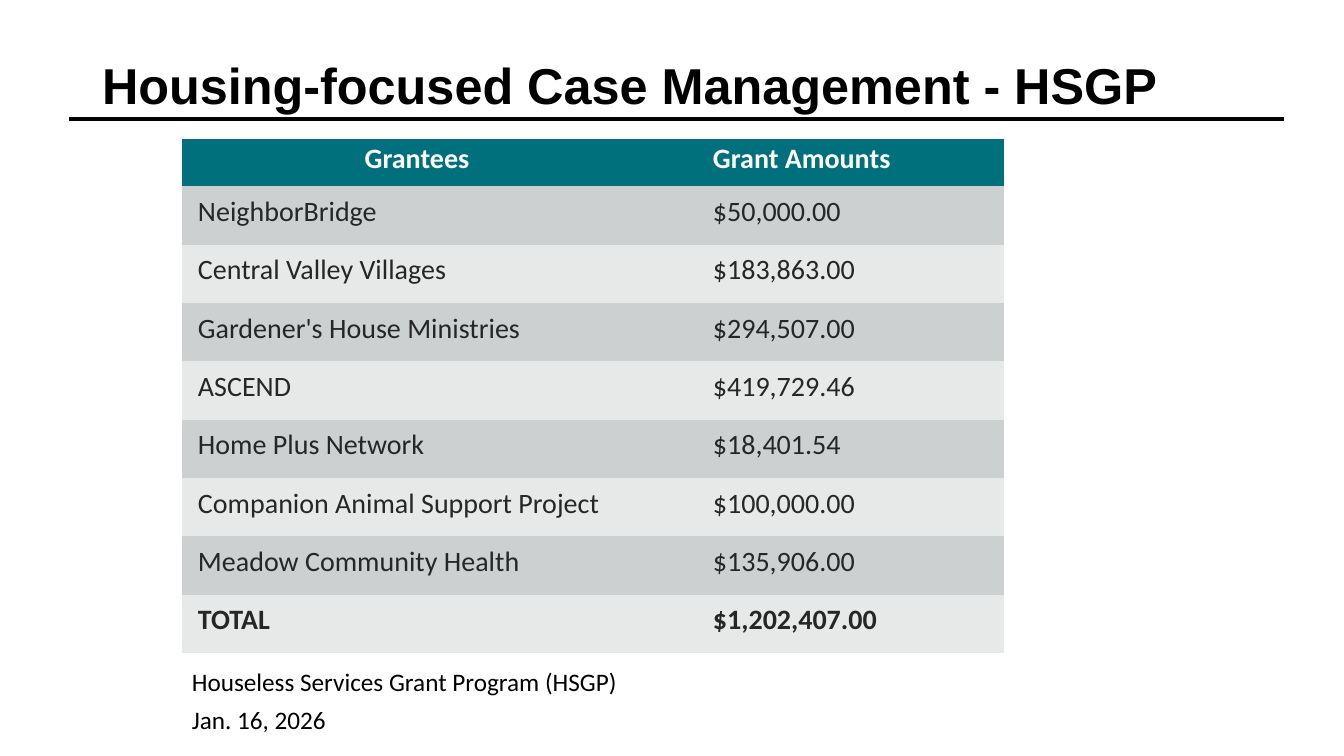
from lxml.etree import SubElement
from pptx import Presentation
from pptx.dml.color import RGBColor
from pptx.enum.shapes import MSO_CONNECTOR
from pptx.enum.text import MSO_ANCHOR, MSO_AUTO_SIZE, PP_ALIGN
from pptx.oxml.ns import qn
from pptx.util import Emu, Pt

EMU_PER_PX = 914400 / 100.8
COLORS = {
    "black": "000000", "white": "FFFFFF", "teal": "00717C",
    "ink": "262626", "dark_band": "CCD0D1", "light_band": "E7E9E9",
}
NO_STYLE = "{2D5ABB26-0587-4C30-8999-92F81FD0307C}"
HEADINGS = ("Grantees", "Grant Amounts")
GRANTS = [
    ("NeighborBridge", "$50,000.00"),
    ("Central Valley Villages", "$183,863.00"),
    ("Gardener's House Ministries", "$294,507.00"),
    ("ASCEND", "$419,729.46"),
    ("Home Plus Network", "$18,401.54"),
    ("Companion Animal Support Project", "$100,000.00"),
    ("Meadow Community Health", "$135,906.00"),
    ("TOTAL", "$1,202,407.00"),
]
CAPTION = ("Houseless Services Grant Program (HSGP)", "Jan. 16, 2026")


def px(length):
    return Emu(round(length * EMU_PER_PX))


def rgb(name):
    return RGBColor.from_string(COLORS[name])


def apply(target, values):
    for name, value in values.items():
        setattr(target, name, value)


def write(paragraph, text, font, color, layout):
    paragraph.text = text
    apply(paragraph, layout)
    apply(paragraph.font, font)
    paragraph.font.color.rgb = rgb(color)


def add_title(slide, text):
    title = slide.shapes.title
    apply(title, {"left": px(92), "top": px(54), "width": px(1252), "height": px(66)})
    frame = title.text_frame
    apply(frame, {"vertical_anchor": MSO_ANCHOR.BOTTOM, "word_wrap": True,
                  "auto_size": MSO_AUTO_SIZE.NONE})
    write(frame.paragraphs[0], text, {"name": "Arial", "size": Pt(36), "bold": True},
          "black", {"alignment": PP_ALIGN.LEFT, "line_spacing": 0.9})


def add_rule(slide, left, right, y):
    rule = slide.shapes.add_connector(MSO_CONNECTOR.STRAIGHT, px(left), px(y), px(right), px(y))
    rule.line.color.rgb = rgb("black")
    rule.line.width = Pt(3)
    SubElement(rule._element.spPr, qn("a:effectLst"))


def fill_cell(cell, text, fill, color, bold, centered, indent):
    cell.fill.solid()
    cell.fill.fore_color.rgb = rgb(fill)
    apply(cell, {"vertical_anchor": MSO_ANCHOR.MIDDLE, "margin_left": px(16),
                 "margin_right": px(10), "margin_top": px(10), "margin_bottom": px(10)})
    paragraph = cell.text_frame.paragraphs[0]
    paragraph._p.get_or_add_pPr().set("marL", str(px(indent)))
    write(paragraph, text, {"name": "Calibri", "size": Pt(20), "bold": bold}, color,
          {"alignment": PP_ALIGN.CENTER if centered else PP_ALIGN.LEFT,
           "line_spacing": Pt(19.5)})


def add_grants_table(slide):
    rows = [HEADINGS, *GRANTS]
    grants = slide.shapes.add_table(len(rows), len(HEADINGS), px(182), px(139),
                                    px(822), px(513)).table
    grants._tbl.tblPr.find(qn("a:tableStyleId")).text = NO_STYLE
    for column, width in zip(grants.columns, (464, 358)):
        column.width = px(width)
    for r, texts in enumerate(rows):
        header = r == 0
        grants.rows[r].height = px(46) if header else Emu(px(467) // len(GRANTS))
        band = "dark_band" if r % 2 else "light_band"
        for c, text in enumerate(texts):
            fill_cell(grants.cell(r, c), text,
                      fill="teal" if header else band,
                      color="white" if header else "ink",
                      bold=header or texts == GRANTS[-1],
                      centered=header and c == 0,
                      indent=51 if c else 0)


def add_caption(slide, lines):
    frame = slide.shapes.add_textbox(px(182), px(661), px(554), px(40)).text_frame
    frame.word_wrap = True
    for i, line in enumerate(lines):
        paragraph = frame.add_paragraph() if i else frame.paragraphs[0]
        write(paragraph, line, {"name": "Calibri", "size": Pt(18)}, "black",
              {"space_after": Pt(6)})


def main():
    deck = Presentation()
    apply(deck, {"slide_width": px(1344), "slide_height": px(756)})
    slide = deck.slides.add_slide(deck.slide_layouts.get_by_name("Title Only"))

    # Heading
    add_rule(slide, 69, 1284, 119)
    add_title(slide, "Housing-focused Case Management - HSGP")

    # Grants and their source
    add_caption(slide, CAPTION)
    add_grants_table(slide)

    deck.save("out.pptx")


if __name__ == "__main__":
    main()
